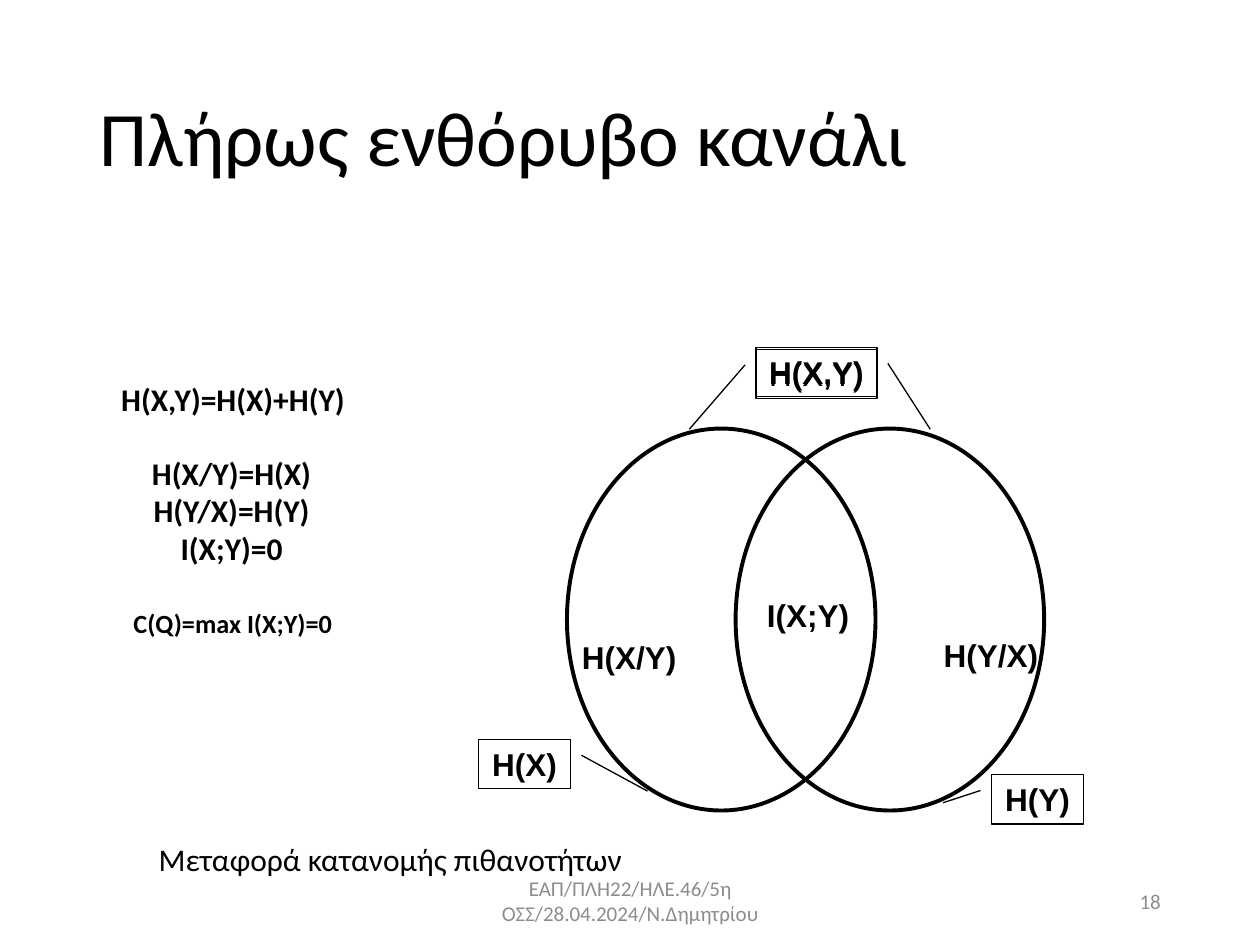
import pptx
import pptx.dml.color
import pptx.enum.shapes
import pptx.enum.text
import pptx.util

Cm, Pt = pptx.util.Cm, pptx.util.Pt
ALIGN = pptx.enum.text.PP_ALIGN
ANCHOR = pptx.enum.text.MSO_ANCHOR
SHAPE = pptx.enum.shapes.MSO_SHAPE

THEME = {
    "ink": pptx.dml.color.RGBColor(0, 0, 0),
    "grey": pptx.dml.color.RGBColor(0x8C, 0x8C, 0x8C),
    "text": "Calibri", "diagram": "Arial",
    "title": 44, "body": 18, "capacity": 15, "footer": 12,
    "circle_line": 2.25, "callout_line": 0.75,
}

# Content: lengths in cm as (left, top, width, height)
TITLE = ("Πλήρως ενθόρυβο κανάλι", (1.75, 1.02, 21.9, 3.68))
FOOTERS = [
    ("ΕΑΠ/ΠΛΗ22/ΗΛΕ.46/5η ΟΣΣ/28.04.2024/Ν.Δημητρίου", (8.41, 17.65, 8.59, 1.02), ALIGN.CENTER),
    ("18", (17.93, 17.65, 5.72, 1.02), ALIGN.RIGHT),
]
FORMULAS = [
    (["H(Χ,Υ)=Η(Χ)+H(Y)"], (2.16, 7.54, 5.08, 1.02)),
    (["H(Χ/Υ)=Η(Χ)", "Η(Υ/Χ)=Η(Υ)", "Ι(Χ;Υ)=0"], (2.79, 9.02, 3.76, 2.57)),
]
CAPACITY = ("C(Q)=max I(X;Y)=0", (-0.1, 12.24, 12.7, 0.79))
CAPTION = ("Μεταφορά κατανομής πιθανοτήτων", (2.95, 16.81, 10.31, 1.02))
CIRCLES = [(left, 8.64, 6.22, 7.7) for left in (11.43, 14.83)]
REGIONS = [
    ("Ι(X;Υ)", (15.21, 11.89, 2.16, 1.02)),
    ("H(X/Y)", (11.48, 12.73, 2.41, 1.02)),
    ("Η(Υ/Χ)", (18.77, 12.7, 2.41, 1.02)),
]
# Callouts: text, bold, box, leader as (start y, start x, end y, end x) in box sizes
CALLOUTS = [
    ("H(Y)", True, (19.99, 15.62, 1.85, 0.99), (0.32, -0.12, 0.57, -0.53)),
    ("H(Χ)", True, (9.65, 14.91, 1.85, 0.99), (0.32, 1.12, 1.05, 1.84)),
    ("H(Χ,Υ)", False, (15.24, 7.04, 2.44, 0.99), (0.32, -0.09, 1.63, -0.55)),
    ("H(Χ,Υ)", True, (15.24, 7.01, 2.44, 0.99), (0.32, 1.09, 1.66, 1.44)),
]


def lengths(values):
    return [Cm(value) for value in values]


def write(frame, lines, size, font="text", color="ink", bold=False, align=ALIGN.CENTER):
    for index, line in enumerate(lines):
        para = frame.add_paragraph() if index else frame.paragraphs[0]
        para.alignment = align
        span = para.add_run()
        span.text = line
        span.font.name = THEME[font]
        span.font.size = Pt(THEME[size])
        span.font.bold = bold
        span.font.color.rgb = THEME[color]


def add_text(page, lines, place, size="body", wrap=False, anchor=ANCHOR.TOP, **style):
    box = page.shapes.add_textbox(*lengths(place))
    frame = box.text_frame
    frame.word_wrap = wrap
    frame.vertical_anchor = anchor
    write(frame, lines, size, **style)
    return frame


def add_outline(page, kind, place, width):
    shape = page.shapes.add_shape(kind, *lengths(place))
    shape.shadow.inherit = False
    shape.fill.background()
    shape.line.color.rgb = THEME["ink"]
    shape.line.width = Pt(THEME[width])
    return shape


deck = pptx.Presentation()
deck.slide_width, deck.slide_height = Cm(25.4), Cm(19.05)
page = deck.slides.add_slide(deck.slide_layouts[5])

# Title
title = page.shapes.title
title.left, title.top, title.width, title.height = lengths(TITLE[1])
title.text_frame.auto_size = pptx.enum.text.MSO_AUTO_SIZE.NONE
title.text_frame.vertical_anchor = ANCHOR.MIDDLE
write(title.text_frame, [TITLE[0]], "title", align=ALIGN.LEFT)
title.text_frame.paragraphs[0].line_spacing = 0.9

# Footer and page number
for text, place, align in FOOTERS:
    add_text(page, [text], place, "footer", wrap=True, anchor=ANCHOR.MIDDLE,
             color="grey", align=align)

# Channel capacity, indented
frame = add_text(page, [CAPACITY[0]], CAPACITY[1], "capacity", wrap=True, bold=True,
                 align=ALIGN.LEFT)
para = frame.paragraphs[0]
para.line_spacing = 0.8
para.level = 2
indent = para._p.get_or_add_pPr()
indent.set("marL", str(Cm(2.54)))
indent.set("indent", "0")

# Entropy diagram
for place in CIRCLES:
    add_outline(page, SHAPE.OVAL, place, "circle_line")

for text, bold, place, leader in CALLOUTS:
    callout = add_outline(page, SHAPE.LINE_CALLOUT_1, place, "callout_line")
    for index, value in enumerate(leader):
        callout.adjustments[index] = value
    frame = callout.text_frame
    frame.margin_left = frame.margin_right = frame.margin_top = frame.margin_bottom = 0
    frame.vertical_anchor = ANCHOR.MIDDLE
    frame.word_wrap = True
    write(frame, [text], "body", font="diagram", bold=bold)

for text, place in REGIONS:
    add_text(page, [text], place, font="diagram", bold=True)

# Formulas and caption
for lines, place in FORMULAS:
    add_text(page, lines, place, bold=True)
add_text(page, [CAPTION[0]], CAPTION[1], align=ALIGN.LEFT)

deck.save("out.pptx")
